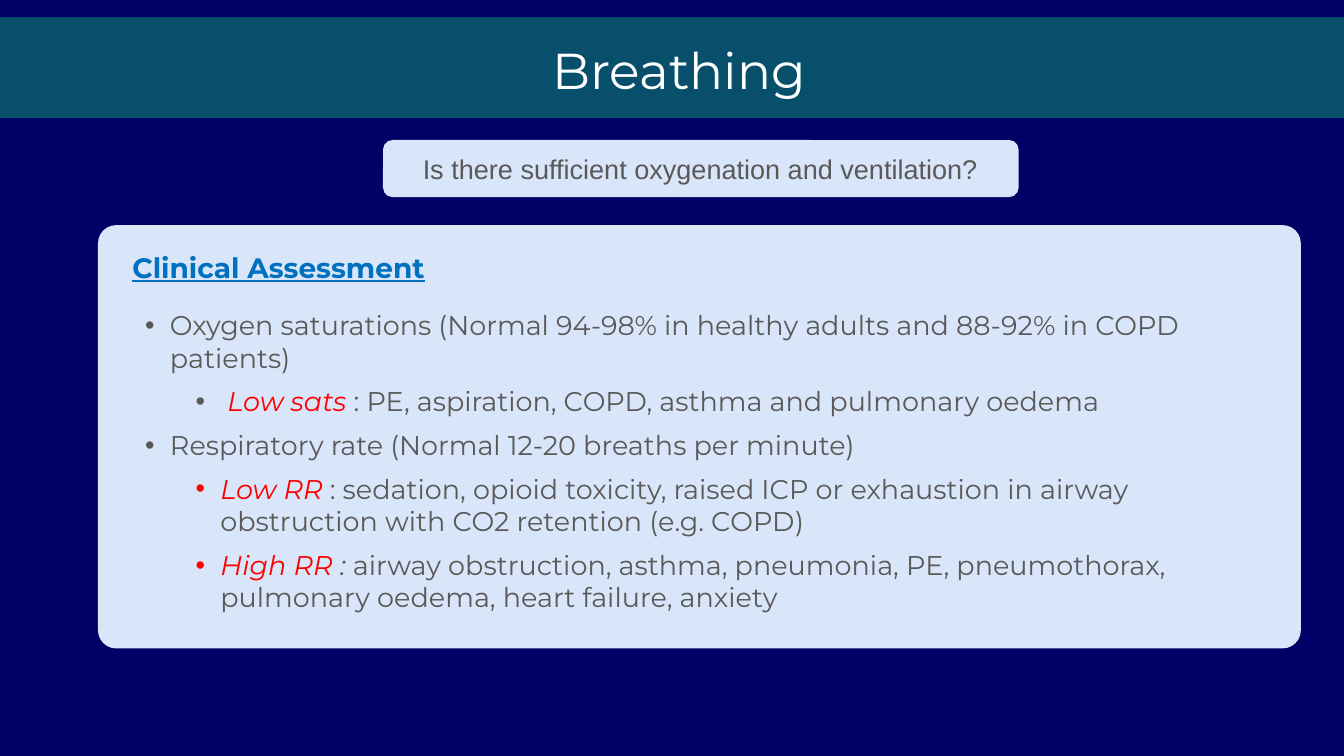
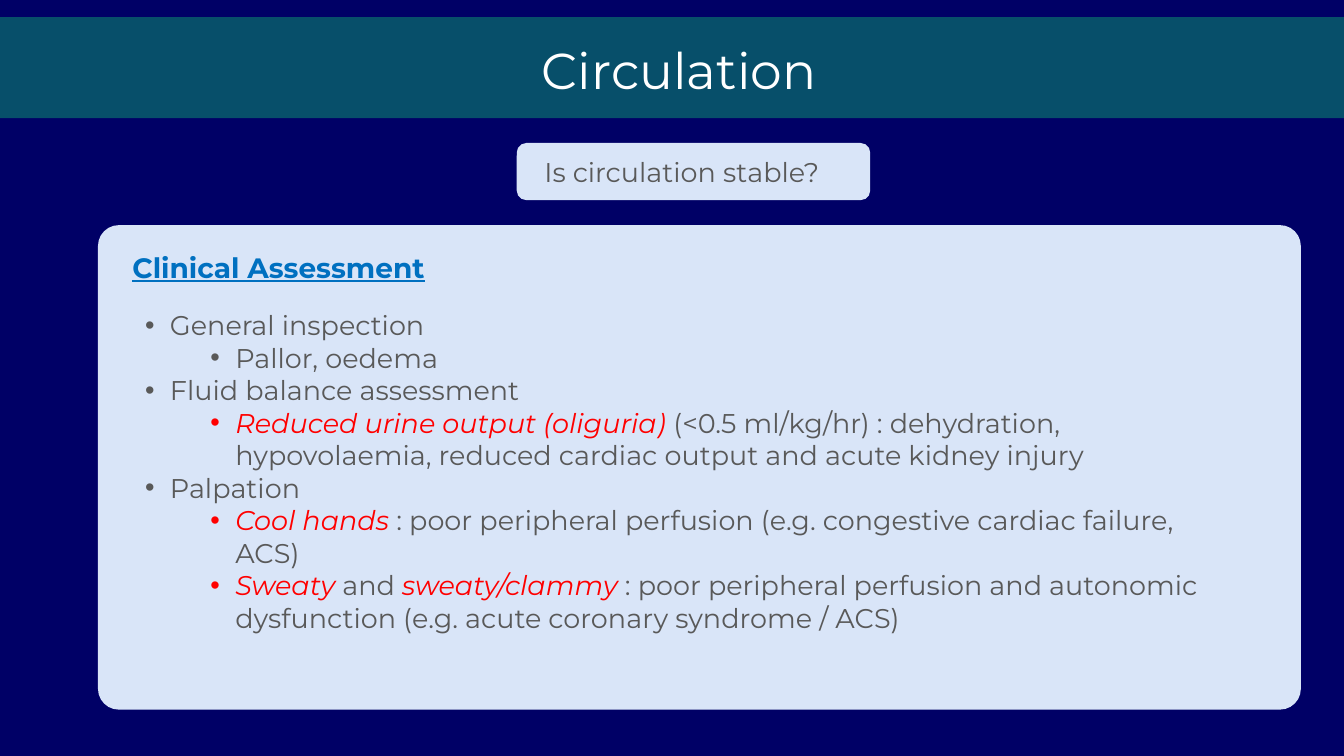
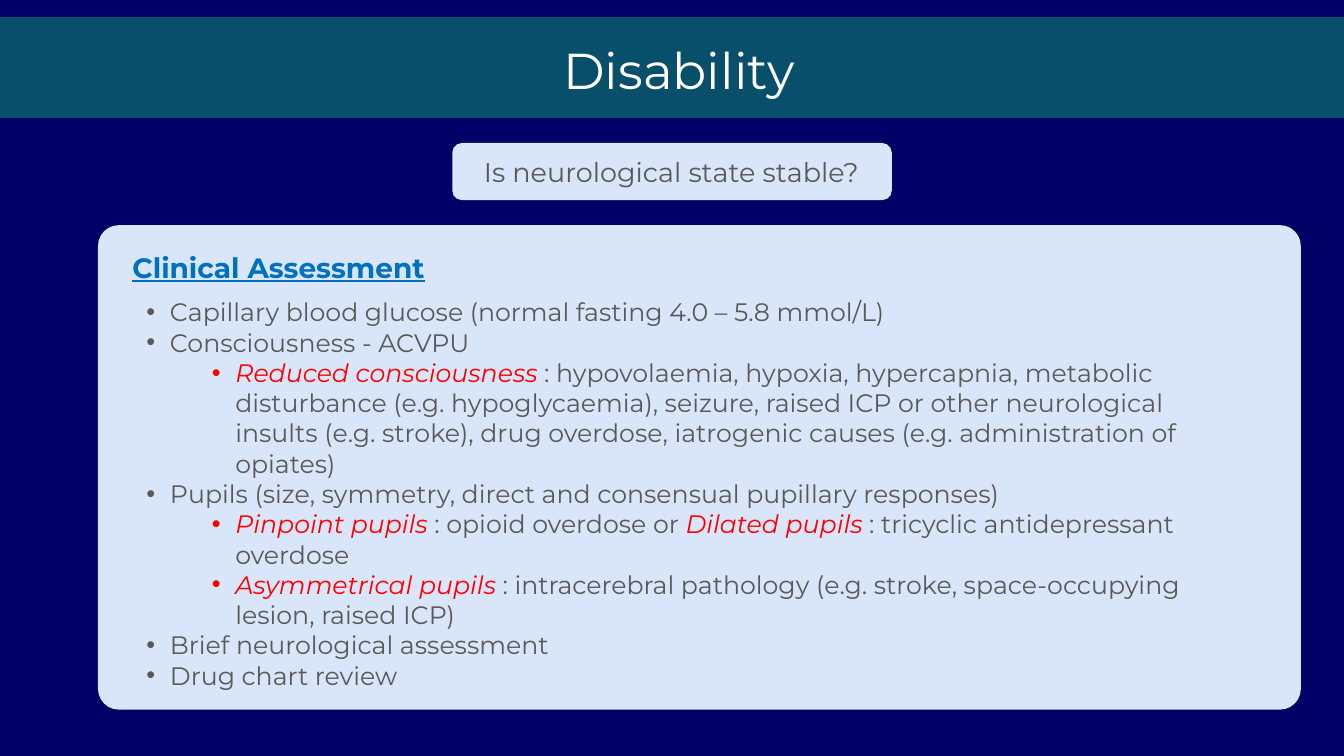
"""Build three clinical assessment slides: Breathing, Circulation and Disability."""
from lxml import etree
from pptx import Presentation
from pptx.dml.color import RGBColor
from pptx.enum.shapes import MSO_SHAPE
from pptx.enum.text import MSO_ANCHOR, PP_ALIGN
from pptx.oxml.ns import qn
from pptx.util import Pt

NAVY = RGBColor(0x00, 0x00, 0x66)
TEAL = RGBColor(0x07, 0x4F, 0x6A)
PALE_BLUE = RGBColor(0xD9, 0xE5, 0xF8)
BLUE = RGBColor(0x00, 0x70, 0xC0)
GREY = RGBColor(0x59, 0x59, 0x59)
RED = RGBColor(0xFF, 0x00, 0x00)
WHITE = RGBColor(0xFF, 0xFF, 0xFF)

RECTANGLE = MSO_SHAPE.RECTANGLE
ROUNDED = MSO_SHAPE.ROUNDED_RECTANGLE
LEFT = PP_ALIGN.LEFT
CENTER = PP_ALIGN.CENTER
TOP = MSO_ANCHOR.TOP

BODY_FONT = "Montserrat"
TITLE = {"name": BODY_FONT, "size": Pt(54), "color": WHITE}
HEADING = {"name": BODY_FONT, "size": Pt(30), "color": BLUE, "bold": True, "underline": True}
PLAIN = {"name": BODY_FONT, "color": GREY}
ITALIC = {**PLAIN, "italic": True}
ALERT = {**ITALIC, "color": RED}

SLIDES = [
    {
        "title": "Breathing",
        "question": "Is there sufficient oxygenation and ventilation?",
        "question_font": "Arial",
        "question_box": (410.4, 150, 681, 61.2),
        "question_text": (429.8, 158.4, 641.5, 46.1),
        "panel_height": 453.6,
        "heading_width": 403.2,
        "body_top": 325.4,
        "body_height": 340.6,
        "size": 29,
        "sub_margin": 95,
        "hanging": 26.6,
        "gap": 12,
        "points": [
            (0, [("Oxygen saturations (Normal 94-98% in healthy adults and 88-92% in COPD patients)", PLAIN)]),
            (1, [(" ", PLAIN), ("Low sats", ALERT),
                 (" : PE, aspiration, COPD, asthma and pulmonary oedema", PLAIN)]),
            (0, [("Respiratory rate (Normal 12-20 breaths per minute)", PLAIN)]),
            (1, [("Low RR", ALERT),
                 (" : sedation, opioid toxicity, raised ICP or exhaustion in airway obstruction "
                  "with CO2 retention (e.g. COPD)", PLAIN)]),
            (1, [("High RR", ALERT), (" : ", ITALIC),
                 ("airway obstruction, asthma, pneumonia, PE, pneumothorax, pulmonary oedema, "
                  "heart failure, anxiety", PLAIN)]),
        ],
    },
    {
        "title": "Circulation",
        "question": "Is circulation stable?",
        "question_font": BODY_FONT,
        "question_box": (553.7, 153.2, 378.7, 61.2),
        "question_text": (563, 161.5, 335.5, 46.1),
        "panel_height": 519.1,
        "heading_width": 446.4,
        "body_top": 325.4,
        "body_height": 362.2,
        "size": 29,
        "sub_margin": 111,
        "hanging": 26.6,
        "gap": 0,
        "points": [
            (0, [("General inspection", PLAIN)]),
            (1, [("Pallor, oedema", PLAIN)]),
            (0, [("Fluid balance assessment", PLAIN)]),
            (1, [("Reduced urine output (oliguria)", ALERT),
                 (" (<0.5 ml/kg/hr) : dehydration, hypovolaemia, reduced cardiac output "
                  "and acute kidney injury", PLAIN)]),
            (0, [("Palpation", PLAIN)]),
            (1, [("Cool hands", ALERT),
                 (" : poor peripheral perfusion (e.g. congestive cardiac failure, ACS)", PLAIN)]),
            (1, [("Sweaty", ALERT), (" and ", PLAIN), ("sweaty/clammy", ALERT),
                 (" : poor peripheral perfusion and autonomic dysfunction "
                  "(e.g. acute coronary syndrome / ACS)", PLAIN)]),
        ],
    },
    {
        "title": "Disability",
        "question": "Is neurological state stable?",
        "question_font": BODY_FONT,
        "question_box": (484.6, 153.2, 470.9, 61.2),
        "question_text": (490.3, 161.5, 458.6, 46.1),
        "panel_height": 519.1,
        "heading_width": 411.8,
        "body_top": 312.5,
        "body_height": 436.3,
        "size": 27,
        "sub_margin": 111,
        "hanging": 25.2,
        "gap": 0,
        "points": [
            (0, [("Capillary blood glucose (normal fasting 4.0 – 5.8 mmol/L)", PLAIN)]),
            (0, [("Consciousness - ACVPU", PLAIN)]),
            (1, [("Reduced consciousness", ALERT),
                 (" : hypovolaemia, hypoxia, hypercapnia, metabolic disturbance "
                  "(e.g. hypoglycaemia), seizure, raised ICP or other neurological insults "
                  "(e.g. stroke), drug overdose, iatrogenic causes "
                  "(e.g. administration of opiates)", PLAIN)]),
            (0, [("Pupils (size, symmetry, direct and consensual pupillary responses)", PLAIN)]),
            (1, [("Pinpoint pupils", ALERT), (" : opioid overdose or ", PLAIN),
                 ("Dilated pupils", ALERT), (" : tricyclic antidepressant overdose", PLAIN)]),
            (1, [("Asymmetrical pupils", ALERT),
                 (" : intracerebral pathology (e.g. stroke, space-occupying lesion, raised ICP)", PLAIN)]),
            (0, [("Brief neurological assessment", PLAIN)]),
            (0, [("Drug chart review", PLAIN)]),
        ],
    },
]


def add_box(shapes, kind, bounds, fill, corner=None):
    """Add a filled shape without line or shadow."""
    shape = shapes.add_shape(kind, *map(Pt, bounds))
    shape.shadow.inherit = False
    shape.fill.solid()
    shape.fill.fore_color.rgb = fill
    shape.line.fill.background()
    if corner is not None:
        shape.adjustments[0] = corner


def add_text(shapes, bounds, paragraphs, alignment=LEFT):
    """Add a text box and return its paragraphs, each given as a list of runs."""
    frame = shapes.add_textbox(*map(Pt, bounds)).text_frame
    frame_format = {"word_wrap": True, "vertical_anchor": TOP, "margin_left": Pt(10.8),
                    "margin_right": Pt(10.8), "margin_top": Pt(5.4), "margin_bottom": Pt(5.4)}
    for attribute, value in frame_format.items():
        setattr(frame, attribute, value)
    for index, runs in enumerate(paragraphs):
        paragraph = frame.add_paragraph() if index else frame.paragraphs[0]
        paragraph.alignment = alignment
        for text, style in runs:
            run = paragraph.add_run()
            run.text = text
            for attribute, value in style.items():
                if attribute == "color":
                    run.font.color.rgb = value
                else:
                    setattr(run.font, attribute, value)
    return frame.paragraphs


presentation = Presentation()
presentation.slide_width = Pt(1440)
presentation.slide_height = Pt(810)

for content in SLIDES:
    slide = presentation.slides.add_slide(presentation.slide_layouts[6])
    slide.background.fill.solid()
    slide.background.fill.fore_color.rgb = NAVY

    question = slide.shapes.add_group_shape().shapes
    question_style = {**PLAIN, "name": content["question_font"], "size": Pt(29)}
    add_box(question, ROUNDED, content["question_box"], PALE_BLUE, 0.167)
    add_text(question, content["question_text"], [[(content["question"], question_style)]], CENTER)

    panel = slide.shapes.add_group_shape().shapes
    add_box(panel, ROUNDED, (105, 241.2, 1288.8, content["panel_height"]), PALE_BLUE, 0.043)
    add_text(panel, (131, 262.8, content["heading_width"], 47.5), [[("Clinical Assessment", HEADING)]])

    size = Pt(content["size"])
    points = [[(text, {**style, "size": size}) for text, style in runs]
              for level, runs in content["points"]]
    body = add_text(panel, (130.3, content["body_top"], 1194.5, content["body_height"]), points)
    for index, (paragraph, (level, runs)) in enumerate(zip(body, content["points"])):
        paragraph.level = level
        paragraph.space_before = Pt(content["gap"] if index else 0)
        properties = paragraph._p.get_or_add_pPr()
        properties.set("marL", str(Pt(content["sub_margin"] if level else 41)))
        properties.set("indent", str(-Pt(content["hanging"])))
        bullet_color = etree.SubElement(properties, qn("a:buClr"))
        etree.SubElement(bullet_color, qn("a:srgbClr"), val=str(runs[0][1]["color"]))
        etree.SubElement(properties, qn("a:buFont"), typeface="Arial")
        etree.SubElement(properties, qn("a:buChar"), char="•")

    banner = slide.shapes.add_group_shape().shapes
    add_box(banner, RECTANGLE, (0, 18.5, 1440, 108), TEAL)
    add_text(banner, (35.3, 36.7, 1384.6, 76.3), [[(content["title"], TITLE)]], CENTER)

presentation.save("out.pptx")
